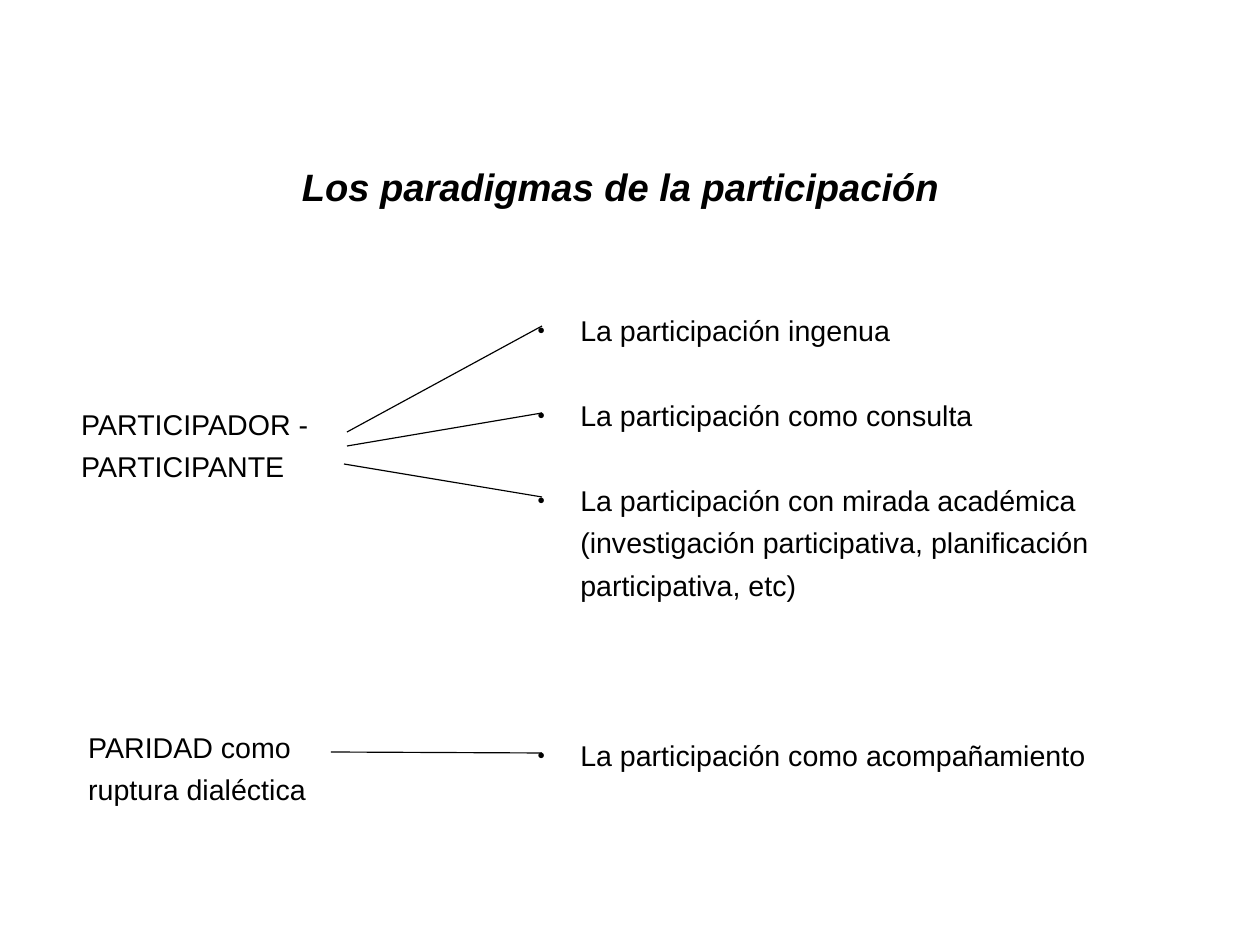
from lxml import etree
from pptx import Presentation
from pptx.dml.color import RGBColor
from pptx.enum.shapes import MSO_CONNECTOR
from pptx.enum.text import PP_ALIGN
from pptx.oxml.ns import qn
from pptx.util import Pt

PX = 8000  # EMU
STRAIGHT = MSO_CONNECTOR.STRAIGHT
CENTER = PP_ALIGN.CENTER
BLACK = "000000"
PITCH = 26.75  # points from line to line
HANG = 43

prs = Presentation()
prs.slide_width = 1260 * PX
prs.slide_height = 945 * PX
slide = prs.slides.add_slide(prs.slide_layouts[6])


def color(code):
    return RGBColor.from_string(code)


def add_text(box, lines, size=18, pitch=PITCH):
    """Add a text box with one paragraph per line and return its paragraphs."""
    frame = slide.shapes.add_textbox(*[n * PX for n in box]).text_frame
    frame.word_wrap = True
    frame.text = "\n".join(lines)
    for para in frame.paragraphs:
        para.line_spacing = Pt(pitch)
        font = para.runs[0].font
        font.name = "Arial"
        font.size = Pt(size)
        font.color.rgb = color(BLACK)
    return frame.paragraphs


title = add_text((237, 146, 767, 69), ["Los paradigmas de la participación"], 24, 36)[0]
title.alignment = CENTER
title.runs[0].font.bold = True
title.runs[0].font.italic = True

# Each item with the number of free lines above it
items = {
    "La participación ingenua": 0,
    "La participación como consulta": 1,
    "La participación con mirada académica (investigación participativa, "
    "planificación participativa, etc)": 1,
    "La participación como acompañamiento": 3,
}
paras = add_text((526, 299, 616, 479), items)
for para, gap in zip(paras, items.values()):
    para.space_before = Pt(gap * PITCH)
    props = para._p.get_or_add_pPr()
    props.set("marL", str(HANG * PX))
    props.set("indent", str(-HANG * PX))
    tint = etree.SubElement(props, qn("a:buClr"))
    etree.SubElement(tint, qn("a:srgbClr"), val=BLACK)
    etree.SubElement(props, qn("a:buSzPct"), val="45000")
    etree.SubElement(props, qn("a:buFont"), typeface="Arial")
    etree.SubElement(props, qn("a:buChar"), char="●")

add_text((70, 393, 360, 96), ["PARTICIPADOR - PARTICIPANTE"])
add_text((77, 716, 289, 96), ["PARIDAD como ruptura dialéctica"])

END = 542
for left, top, end_top in [
    (347, 432, 326),
    (347, 446, 413),
    (344, 464, 497),
    (331, 752, 753),
]:
    link = slide.shapes.add_connector(
        STRAIGHT, left * PX, top * PX, END * PX, end_top * PX
    )
    link.line.color.rgb = color(BLACK)
    link.line.width = Pt(0.75)
    etree.SubElement(link._element.spPr, qn("a:effectLst"))

prs.save("out.pptx")
